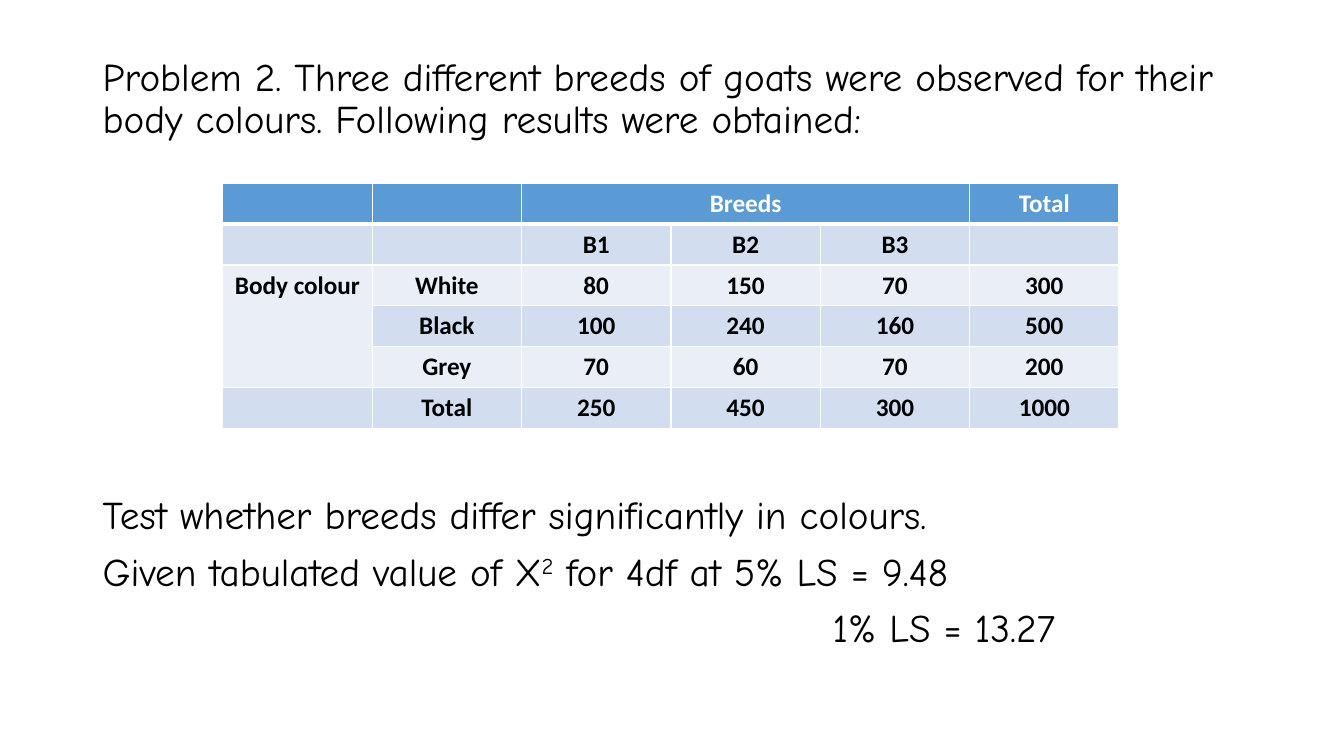
import pptx
import pptx.dml.color
import pptx.enum.text
import pptx.oxml.ns
import pptx.util
from lxml import etree

Inches = pptx.util.Inches
Pt = pptx.util.Pt
RGBColor = pptx.dml.color.RGBColor

BLACK = RGBColor(0x00, 0x00, 0x00)
WHITE = RGBColor(0xFF, 0xFF, 0xFF)
HEADER_BLUE = RGBColor(0x5B, 0x9B, 0xD5)
BAND_DARK = RGBColor(0xD2, 0xDE, 0xEF)
BAND_LIGHT = RGBColor(0xEA, 0xEF, 0xF7)

BODY_FONT = {"name": "Comic Neue", "size": Pt(28)}
TABLE_FONT = {"name": "Calibri", "size": Pt(18), "bold": True}

PROBLEM = [
    {"runs": ["Problem 2. Three different breeds of goats were observed for their "
              "body colours. Following results were obtained:"]},
]
QUESTION = [
    {"runs": ["Test whether breeds differ significantly in colours."]},
    {"runs": ["Given tabulated value of X", "2", " for 4df at 5% LS = 9.48"],
     "superscript": 1},
    {"runs": ["1% LS = 13.27"], "indent": 7.24},
]
COLOUR_COUNTS = [
    ["", "", "Breeds", "", "", "Total"],
    ["", "", "B1", "B2", "B3", ""],
    ["Body colour", "White", "80", "150", "70", "300"],
    ["", "Black", "100", "240", "160", "500"],
    ["", "Grey", "70", "60", "70", "200"],
    ["", "Total", "250", "450", "300", "1000"],
]


def set_font(font, formats, colour):
    for name, value in formats.items():
        setattr(font, name, value)
    font.color.rgb = colour


def add_text(slide, left, top, width, height, paragraphs):
    """Place a wrapped block of body text in the given box."""
    box = slide.shapes.add_textbox(Inches(left), Inches(top), Inches(width), Inches(height))
    frame = box.text_frame
    frame.word_wrap = True
    for index, content in enumerate(paragraphs):
        paragraph = frame.add_paragraph() if index else frame.paragraphs[0]
        paragraph.line_spacing = 0.9
        if index:
            paragraph.space_before = Pt(10)
        if "indent" in content:
            paragraph._p.get_or_add_pPr().set("marL", str(Inches(content["indent"])))
        for position, text in enumerate(content["runs"]):
            run = paragraph.add_run()
            run.text = text
            set_font(run.font, BODY_FONT, BLACK)
            if position == content.get("superscript"):
                run._r.get_or_add_rPr().set("baseline", "30000")


def set_borders(cell, widths):
    """Give the cell white borders, with widths in points by side."""
    properties = cell._tc.get_or_add_tcPr()
    for side, width in widths.items():
        line = etree.SubElement(properties, pptx.oxml.ns.qn(f"a:ln{side}"), w=str(Pt(width)))
        fill = etree.SubElement(line, pptx.oxml.ns.qn("a:solidFill"))
        etree.SubElement(fill, pptx.oxml.ns.qn("a:srgbClr"), val=str(WHITE))


def add_count_table(slide, left, top, width, height, rows):
    """Place the banded table of body colours by breed in the given box."""
    row_count, column_count = len(rows), len(rows[0])
    table = slide.shapes.add_table(row_count, column_count, Inches(left), Inches(top),
                                   Inches(width), Inches(height)).table
    for row_index, row in enumerate(rows):
        is_header = row_index == 0
        band = BAND_DARK if row_index % 2 else BAND_LIGHT
        for column_index, text in enumerate(row):
            cell = table.cell(row_index, column_index)
            set_borders(cell, {"L": 1, "R": 1, "T": 3 if row_index == 1 else 1,
                               "B": 3 if is_header else 1})
            cell.fill.solid()
            cell.fill.fore_color.rgb = HEADER_BLUE if is_header else band
            cell.text = text
            paragraph = cell.text_frame.paragraphs[0]
            paragraph.alignment = pptx.enum.text.PP_ALIGN.CENTER
            set_font(paragraph.font, TABLE_FONT, WHITE if is_header else BLACK)
    # Spans of the breeds heading and the body colour label
    table.cell(0, 2).merge(table.cell(0, 4))
    table.cell(2, 0).merge(table.cell(4, 0))


def main():
    presentation = pptx.Presentation()
    presentation.slide_width = Inches(13.33)
    presentation.slide_height = Inches(7.5)
    slide = presentation.slides.add_slide(presentation.slide_layouts[6])

    # Problem statement, observed counts, question
    add_text(slide, 0.92, 0.52, 11.5, 1, PROBLEM)
    add_count_table(slide, 2.21, 1.82, 8.89, 2.43, COLOUR_COUNTS)
    add_text(slide, 0.92, 4.87, 11.5, 1.88, QUESTION)

    presentation.save("out.pptx")


if __name__ == "__main__":
    main()
